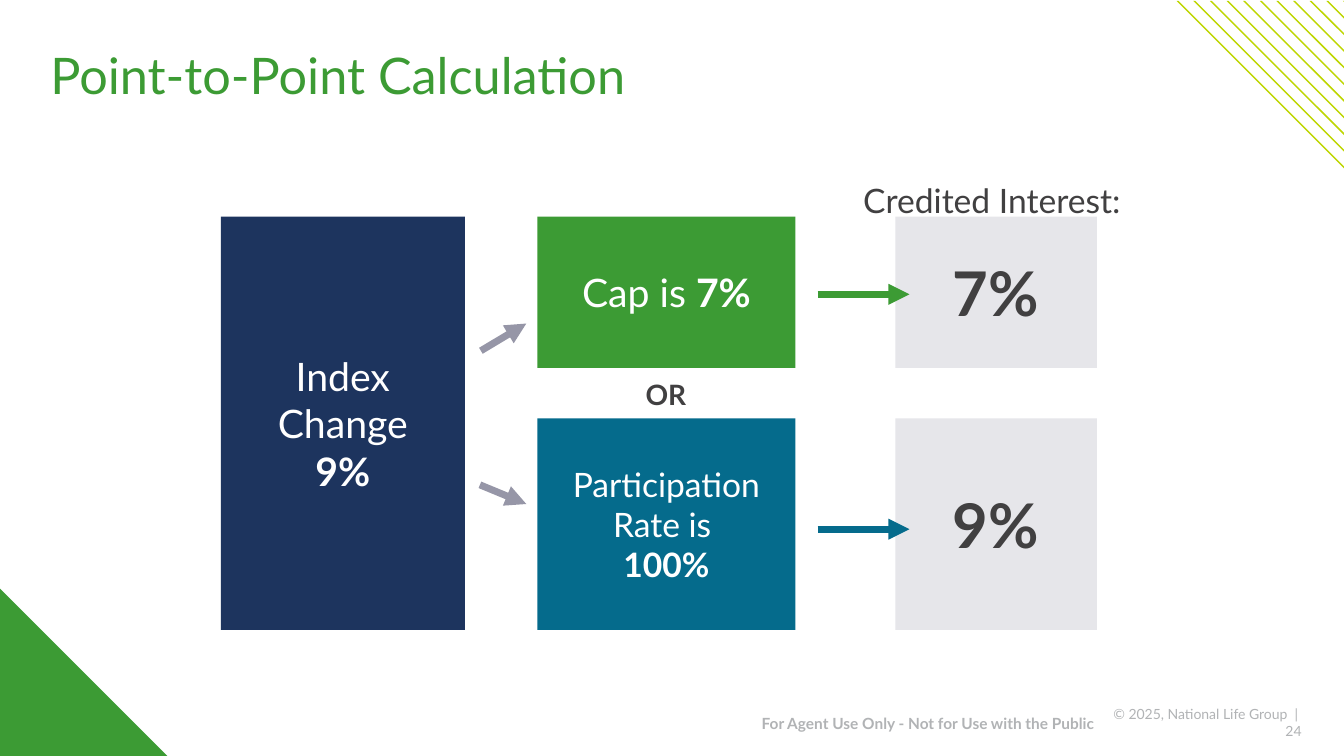
from dataclasses import dataclass

from lxml import etree
from pptx import Presentation
from pptx.dml.color import RGBColor
from pptx.enum.shapes import MSO_CONNECTOR, MSO_SHAPE
from pptx.enum.text import MSO_ANCHOR, PP_ALIGN
from pptx.oxml.ns import qn
from pptx.util import Inches, Pt


@dataclass(frozen=True)
class Theme:
    font: str = "Lato"
    green: str = "3C9B34"
    lime: str = "BED600"
    navy: str = "1D345E"
    teal: str = "056B8C"
    pale: str = "E6E6EA"
    gray: str = "9696A7"
    dark: str = "414041"
    white: str = "FFFFFF"
    footer: str = "B1B3B5"
    title_size: int = 36
    result_size: int = 44
    box_size: int = 28
    label_size: int = 24
    or_size: int = 20
    notice_size: int = 11
    copyright_size: int = 10


theme = Theme()


def paint(shape, color):
    shape.shadow.inherit = False
    shape.fill.solid()
    shape.fill.fore_color.rgb = RGBColor.from_string(color)
    shape.line.fill.background()


def write(shape, paragraphs, size, color, align=PP_ALIGN.CENTER,
          anchor=MSO_ANCHOR.MIDDLE, margin=0.1, wrap=True):
    """Fill a shape with paragraphs, each a list of (text, bold) runs."""
    frame = shape.text_frame
    frame.word_wrap = wrap
    frame.vertical_anchor = anchor
    frame.margin_left = frame.margin_right = Inches(margin)
    frame.margin_top = frame.margin_bottom = Inches(margin / 2)
    for index, runs in enumerate(paragraphs):
        paragraph = frame.add_paragraph() if index else frame.paragraphs[0]
        paragraph.alignment = align
        for text, bold in runs:
            run = paragraph.add_run()
            run.text = text
            run.font.name = theme.font
            run.font.size = Pt(size)
            run.font.bold = bold
            run.font.color.rgb = RGBColor.from_string(color)


presentation = Presentation()
presentation.slide_width = Inches(13.33)
presentation.slide_height = Inches(7.5)
slide = presentation.slides.add_slide(presentation.slide_layouts[6])
shapes = slide.shapes

# Corner decoration
corner = shapes.add_shape(MSO_SHAPE.RIGHT_TRIANGLE, Inches(0), Inches(5.84),
                          Inches(1.66), Inches(1.66))
paint(corner, theme.green)

right, top, thickness = 13.34, 0.01, 0.02
stripes = None
for index in range(11):
    start = 11.67 + index * 0.165
    depth = top + right - start
    outline = [(Inches(x), Inches(y)) for x, y in (
        (start, top), (start + thickness, top),
        (right, depth - thickness), (right, depth))]
    if stripes is None:
        stripes = shapes.build_freeform(*outline[0])
    else:
        stripes.move_to(*outline[0])
    stripes.add_line_segments(outline[1:], close=True)
paint(stripes.convert_to_shape(), theme.lime)

# Title, footer and labels
middle, upper = MSO_ANCHOR.MIDDLE, MSO_ANCHOR.TOP
left_align, center, right_align = PP_ALIGN.LEFT, PP_ALIGN.CENTER, PP_ALIGN.RIGHT
labels = [
    ((0.5, 0.5, 11.2, 0.55), "Point-to-Point Calculation", False,
     theme.title_size, theme.green, left_align, middle, 0, True),
    ((7.51, 7.08, 3.39, 0.19), "For Agent Use Only - Not for Use with the Public", True,
     theme.notice_size, theme.footer, center, middle, 0, False),
    ((10.95, 7.08, 1.96, 0.17), "© 2025, National Life Group  |  24", False,
     theme.copyright_size, theme.footer, right_align, middle, 0, True),
    ((6.19, 3.7, 0.83, 0.45), "OR", True,
     theme.or_size, theme.dark, center, upper, 0.1, True),
    ((7.89, 1.74, 3.98, 0.45), "Credited Interest: ", False,
     theme.label_size, theme.dark, center, upper, 0.1, True),
]
for bounds, text, bold, size, color, align, anchor, margin, wrap in labels:
    label = shapes.add_textbox(*map(Inches, bounds))
    write(label, [[(text, bold)]], size, color, align, anchor, margin, wrap)
    if size == theme.title_size:
        label.text_frame.paragraphs[0].line_spacing = 0.9

# Boxes: the cap row and the participation row share tops and heights
cap_top, cap_height = 2.15, 1.5
rate_top, rate_height = 4.15, 2.1
boxes = [
    ((2.19, cap_top, 2.42, rate_top + rate_height - cap_top), theme.navy,
     [[("Index Change", False)], [("9%", True)]], theme.box_size, theme.white),
    ((5.33, cap_top, 2.56, cap_height), theme.green,
     [[("Cap is ", False), ("7%", True)]], theme.box_size, theme.white),
    ((5.33, rate_top, 2.56, rate_height), theme.teal,
     [[("Participation Rate is ", False)], [("100%", True)]],
     theme.label_size, theme.white),
    ((8.88, cap_top, 2, cap_height), theme.pale,
     [[("7%", True)]], theme.result_size, theme.dark),
    ((8.88, rate_top, 2, rate_height), theme.pale,
     [[("9%", True)]], theme.result_size, theme.dark),
]
for bounds, fill, paragraphs, size, color in boxes:
    box = shapes.add_shape(MSO_SHAPE.RECTANGLE, *map(Inches, bounds))
    paint(box, fill)
    write(box, paragraphs, size, color)

# Arrows
arrows = [
    ((8.11, 2.92, 9.02, 2.92), theme.green),
    ((8.11, 5.25, 9.02, 5.25), theme.teal),
    ((4.77, 3.48, 5.22, 3.21), theme.gray),
    ((4.76, 4.81, 5.22, 5), theme.gray),
]
for ends, color in arrows:
    arrow = shapes.add_connector(MSO_CONNECTOR.STRAIGHT, *map(Inches, ends))
    arrow.line.color.rgb = RGBColor.from_string(color)
    arrow.line.width = Pt(5)
    etree.SubElement(arrow.line._get_or_add_ln(), qn("a:tailEnd"), type="triangle")
    etree.SubElement(arrow._element.spPr, qn("a:effectLst"))

presentation.save("out.pptx")
